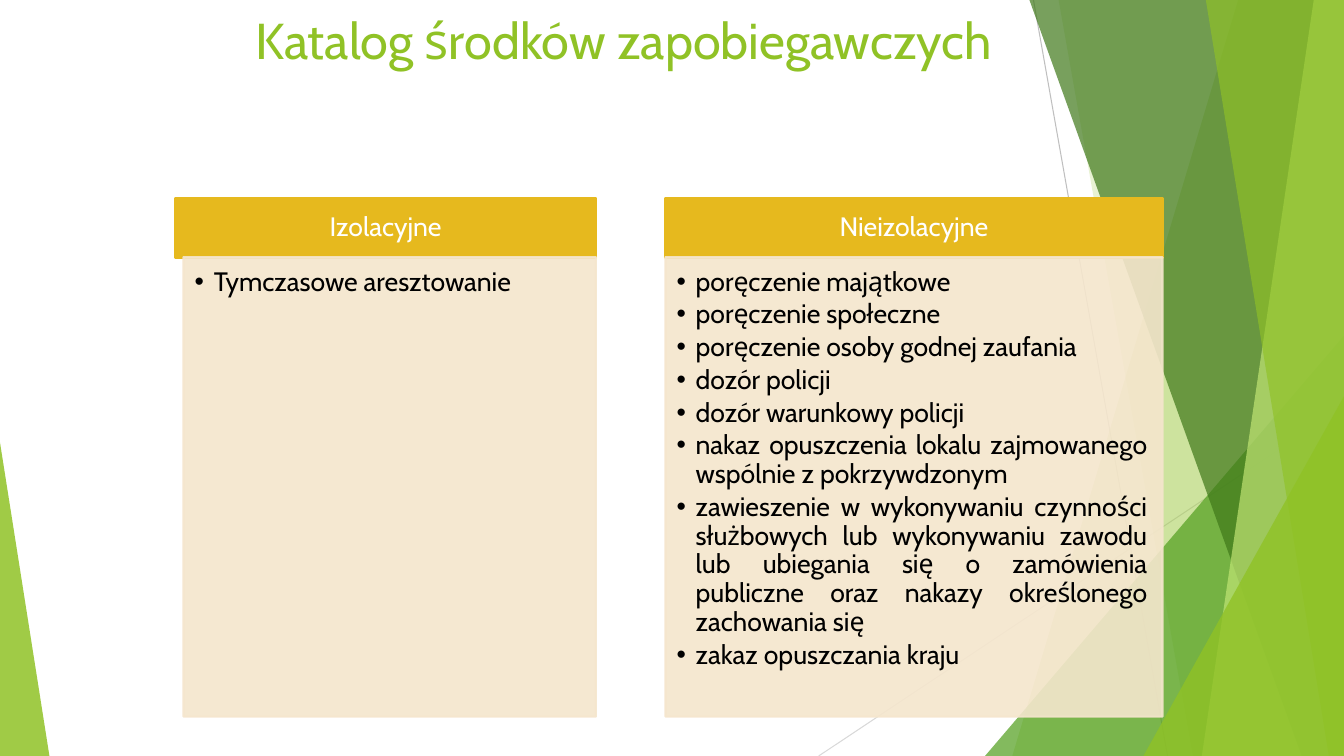
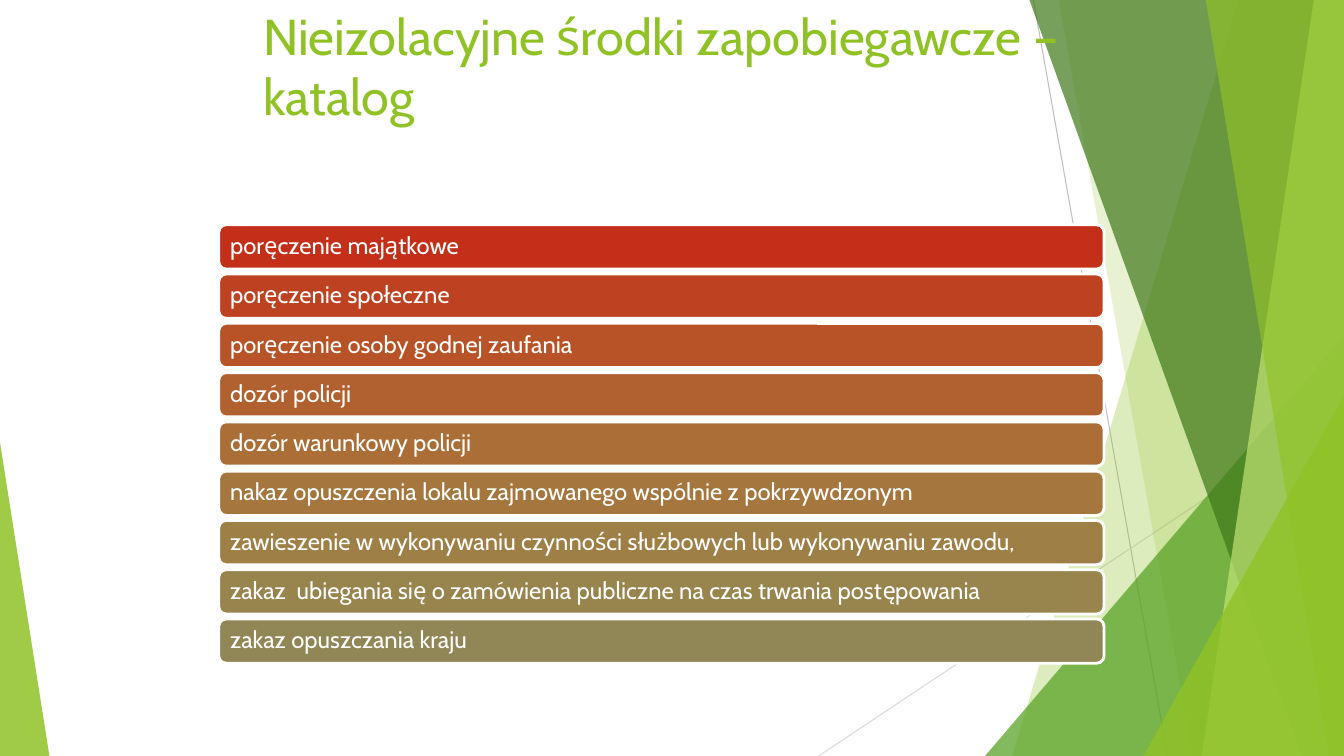
from pptx import Presentation
from pptx.dml.color import RGBColor
from pptx.enum.shapes import MSO_CONNECTOR, MSO_SHAPE
from pptx.enum.text import MSO_ANCHOR, MSO_AUTO_SIZE, PP_ALIGN
from pptx.oxml.ns import qn
from pptx.util import Inches, Pt
from lxml.etree import SubElement

WIDE, HIGH = 13.33, 7.5
LIME, WHITE, BLACK = "90C226", "FFFFFF", "000000"
GOLD, CREAM = "E6B91E", "F5E6CD"

LINES = [
    ((10.25, 0, 11.58, HIGH), "BFBFBF"),
    ((WIDE, 4.03, 8.12, HIGH), "D9D9D9"),
]
BACK = [
    (12.28, 10.04, LIME, 30),
    (10.5, 11.83, LIME, 20),
]
FRONT = [
    (10.21, 12.91, "3F7819", 70),
    (13.03, 11.92, "C0E474", 70),
    (11.96, 13.18, LIME, 65),
]
LOW = ((9.77, 3.33, 3.56, 4.17), 1, "54A021", 72)
ENDS = [
    ((11.34, 3.93, 1.99, 3.57), 1, LIME, 80),
    ((0, 4.39, 0.49, 3.11), 0, LIME, 85),
]

TITLE = {
    "frame": {"vertical_anchor": MSO_ANCHOR.TOP},
    "para": {"alignment": PP_ALIGN.LEFT},
    "font": {"size": Pt(36)},
}
HEAD = {
    "frame": {"vertical_anchor": MSO_ANCHOR.MIDDLE},
    "para": {"alignment": PP_ALIGN.CENTER, "line_spacing": 0.9, "space_before": Pt(0)},
    "font": {"size": Pt(19), "bold": False},
}
LIST = {
    "frame": {
        "vertical_anchor": MSO_ANCHOR.TOP,
        "margin_left": Inches(0.11),
        "margin_top": Inches(0.11),
        "margin_right": Inches(0.15),
        "margin_bottom": Inches(0.17),
    },
    "para": {"line_spacing": 0.9, "space_before": Pt(0), "space_after": Pt(2.9)},
    "font": {"size": Pt(19)},
}
BAR = {
    "frame": {"vertical_anchor": MSO_ANCHOR.MIDDLE, "margin_left": Inches(0.09)},
    "para": {"alignment": PP_ALIGN.LEFT, "line_spacing": 0.9},
    "font": {"size": Pt(17)},
}

SHORT = [
    "poręczenie majątkowe",
    "poręczenie społeczne",
    "poręczenie osoby godnej zaufania",
    "dozór policji",
    "dozór warunkowy policji",
    "nakaz opuszczenia lokalu zajmowanego wspólnie z pokrzywdzonym",
]
LAST = "zakaz opuszczania kraju"
ITEMS = SHORT + [
    "zawieszenie w wykonywaniu czynności służbowych lub wykonywaniu zawodu "
    "lub ubiegania się o zamówienia publiczne oraz nakazy określonego zachowania się",
    LAST,
]
BARS = SHORT + [
    "zawieszenie w wykonywaniu czynności służbowych lub wykonywaniu zawodu,",
    "zakaz  ubiegania się o zamówienia publiczne na czas trwania postępowania",
    LAST,
]
HUES = ["C42F1A", "BE4221", "B85328", "B16130", "AB6E37",
        "A5773E", "9E7F46", "98844D", "918655"]


def tint(hue):
    """Turn a hex string into a colour."""
    return RGBColor.from_string(hue)


def apply(item, vals):
    """Set each attribute of an item from a dict."""
    for key, val in vals.items():
        setattr(item, key, val)


def place(shape, box):
    """Move a shape to a box in inches."""
    keys = ("left", "top", "width", "height")
    apply(shape, dict(zip(keys, map(Inches, box))))


def paint(shape, hue, clear=100, edge=None, width=1.5):
    """Fill and outline a shape with an opacity in percent."""
    shape.shadow.inherit = False
    shape.fill.solid()
    shape.fill.fore_color.rgb = tint(hue)
    if edge:
        shape.line.color.rgb = tint(edge)
        shape.line.width = Pt(width)
    else:
        shape.line.fill.background()
    if clear < 100:
        for node in shape.element.iter(qn("a:srgbClr")):
            SubElement(node, qn("a:alpha"), val=str(clear * 1000))


def write(shape, texts, style, hue):
    """Write one paragraph per text in a style."""
    frame = shape.text_frame
    frame.text = "\n".join(texts)
    apply(frame, {"word_wrap": True, "auto_size": MSO_AUTO_SIZE.NONE, **style["frame"]})
    for para in frame.paragraphs:
        apply(para, style["para"])
        for run in para.runs:
            apply(run.font, {"name": "Cabin", **style["font"]})
            run.font.color.rgb = tint(hue)


def dot(shape):
    """Give each paragraph a hanging bullet."""
    for para in shape.text_frame.paragraphs:
        props = para._p.get_or_add_pPr()
        apply_xml = {"marL": Inches(0.19), "indent": Inches(-0.19)}
        for key, val in apply_xml.items():
            props.set(key, str(int(val)))
        SubElement(props, qn("a:buFont"), typeface="Arial")
        SubElement(props, qn("a:buChar"), char="•")


def line(shapes, ends, hue):
    """Draw a thin straight line."""
    rule = shapes.add_connector(MSO_CONNECTOR.STRAIGHT, *map(Inches, ends))
    rule.line.color.rgb = tint(hue)
    rule.line.width = Pt(0.75)
    SubElement(rule.element.spPr, qn("a:effectLst"))
    return rule


def band(shapes, top, foot, hue, clear):
    """Draw a slanted band that reaches the right edge."""
    spots = [(WIDE, 0), (WIDE, HIGH), (foot, HIGH)]
    pen = shapes.build_freeform(Inches(top), 0)
    pen.add_line_segments([(Inches(x), Inches(y)) for x, y in spots], close=True)
    form = pen.convert_to_shape()
    paint(form, hue, clear)
    return form


def wedge(shapes, box, peak, hue, clear):
    """Draw a triangle with its peak at one side."""
    form = shapes.add_shape(MSO_SHAPE.ISOSCELES_TRIANGLE, *map(Inches, box))
    form.adjustments[0] = peak
    paint(form, hue, clear)
    return form


def decor(deck, slide):
    """Draw the shared facets and move them to the master."""
    shapes = slide.shapes
    parts = [line(shapes, *row) for row in LINES]
    parts += [band(shapes, *row) for row in BACK]
    parts.append(wedge(shapes, *LOW))
    parts += [band(shapes, *row) for row in FRONT]
    parts += [wedge(shapes, *row) for row in ENDS]
    tree = deck.slide_master.shapes.element
    for spot, part in enumerate(parts, 2):
        tree.insert(spot, part.element)


def title(slide, text, box):
    """Place the slide title in a box."""
    place(slide.shapes.title, box)
    write(slide.shapes.title, [text], TITLE, LIME)


def panel(head, body, box, name, items, align, shift=0):
    """Fill a header and a bullet list within a box."""
    left, top, width, tall = box
    place(head, (left, top, width, 0.6))
    paint(head, GOLD, edge=GOLD)
    write(head, [name], HEAD, WHITE)
    place(body, (left + shift, top + 0.59, width - shift, tall - 0.59))
    paint(body, CREAM, 90, CREAM)
    write(body, items, LIST, BLACK)
    apply_all = {"alignment": align}
    for para in body.text_frame.paragraphs:
        apply(para, apply_all)
    dot(body)


def stack(slide, box, gap):
    """Stack equal coloured bars in a box."""
    left, top, width, tall = box
    step = (tall + gap) / len(BARS)
    for row, (text, hue) in enumerate(zip(BARS, HUES)):
        spot = (left, top + row * step, width, step - gap)
        bar = slide.shapes.add_shape(MSO_SHAPE.ROUNDED_RECTANGLE, *map(Inches, spot))
        paint(bar, hue, edge=WHITE, width=2)
        write(bar, [text], BAR, WHITE)


def main():
    """Build and save both slides."""
    deck = Presentation()
    apply(deck, {"slide_width": Inches(WIDE), "slide_height": Inches(HIGH)})

    slide = deck.slides.add_slide(deck.slide_layouts[4])
    decor(deck, slide)
    title(slide, "Katalog środków zapobiegawczych", (2.43, 0.04, 7.97, 1.64))
    _, head, body, head2, body2 = slide.placeholders
    panel(head, body, (1.74, 1.96, 4.17, 5.15), "Izolacyjne",
          ["Tymczasowe aresztowanie"], PP_ALIGN.LEFT, 0.08)
    panel(head2, body2, (6.6, 1.96, 4.93, 5.15), "Nieizolacyjne",
          ITEMS, PP_ALIGN.JUSTIFY)

    slide = deck.slides.add_slide(deck.slide_layouts[5])
    title(slide, "Nieizolacyjne środki zapobiegawcze – katalog", (2.51, 0, 8.84, 1.64))
    stack(slide, (2.17, 2.23, 8.78, 4.35), 0.05)

    deck.save("out.pptx")


if __name__ == "__main__":
    main()
